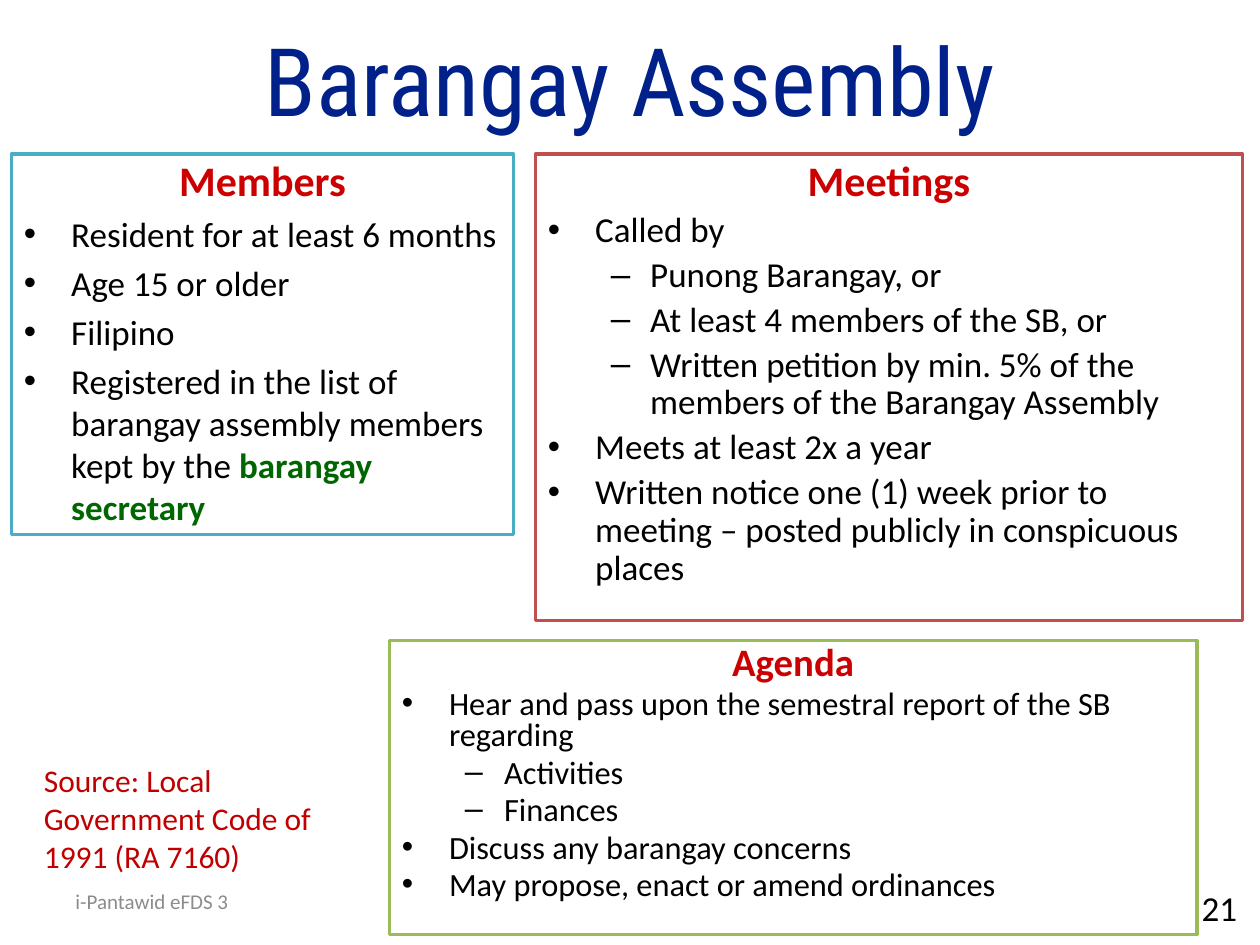
from dataclasses import dataclass

from lxml.etree import SubElement
from pptx import Presentation
from pptx.dml.color import RGBColor
from pptx.enum.shapes import MSO_SHAPE
from pptx.enum.text import MSO_ANCHOR as Anchor, MSO_AUTO_SIZE as AutoSize, PP_ALIGN as Align
from pptx.oxml.ns import qn
from pptx.util import Pt

BLACK, WHITE, RED, GREEN = "000000", "FFFFFF", "CC0000", "006600"
BULLETS = ("•", "–")
INDENTS = ((27, -27), (58.5, -22.5))  # left margin and first line, by level


@dataclass(frozen=True)
class Box:
    left: float
    top: float
    width: float
    height: float


@dataclass(frozen=True)
class Item:
    text: str
    level: int = 0
    emphasis: str = ""


@dataclass(frozen=True)
class Panel:
    heading: str
    box: Box
    border: str
    items: tuple[Item, ...]
    heading_size: float = 24
    item_size: float = 20
    heading_spacing: float = 0.9
    item_spacing: float = 0.9


PANELS = (
    Panel("Members", Box(6.5, 88, 287, 217.5), "4BACC6", (
        Item("Resident for at least 6 months"),
        Item("Age 15 or older"),
        Item("Filipino"),
        Item("Registered in the list of barangay assembly members kept by the ",
             emphasis="barangay secretary"),
    ), item_spacing=1),
    Panel("Meetings", Box(306, 88, 404, 266.5), "C0504D", (
        Item("Called by"),
        Item("Punong Barangay, or", 1),
        Item("At least 4 members of the SB, or", 1),
        Item("Written petition by min. 5% of the members of the Barangay Assembly", 1),
        Item("Meets at least 2x a year"),
        Item("Written notice one (1) week prior to meeting – posted publicly "
             "in conspicuous places"),
    )),
    Panel("Agenda", Box(222.5, 366, 461.5, 168), "9BBB59", (
        Item("Hear and pass upon the semestral report of the SB regarding"),
        Item("Activities", 1),
        Item("Finances", 1),
        Item("Discuss any barangay concerns"),
        Item("May propose, enact or amend ordinances"),
    ), 22.2, 18.5, 0.8, 0.8),
)


def color(value: str) -> RGBColor:
    return RGBColor.from_string(value)


def place(shape, box: Box) -> None:
    shape.left, shape.top = Pt(box.left), Pt(box.top)
    shape.width, shape.height = Pt(box.width), Pt(box.height)


def write(paragraph, text: str, *, size: float, fill: str = BLACK,
          font: str = "Calibri", bold: bool = False, align=Align.LEFT) -> None:
    paragraph.alignment = align
    run = paragraph.add_run()
    run.text = text
    run.font.size, run.font.name, run.font.bold = Pt(size), font, bold
    run.font.color.rgb = color(fill)


def set_spacing(paragraph, size: float, lines: float) -> None:
    paragraph.line_spacing = lines
    paragraph.space_before = Pt(round(size * 0.2, 1))
    paragraph.space_after = Pt(0)


def set_bullet(paragraph, level: int | None) -> None:
    """Set indents and bullet; a level of None means no bullet."""
    properties = paragraph._p.get_or_add_pPr()
    margin, indent = (0, 0) if level is None else INDENTS[level]
    properties.set("marL", str(Pt(margin)))
    properties.set("indent", str(Pt(indent)))
    if level is None:
        SubElement(properties, qn("a:buNone"))
    else:
        paragraph.level = level
        SubElement(properties, qn("a:buFont"), typeface="Arial")
        SubElement(properties, qn("a:buChar"), char=BULLETS[level])


def fill_panel(shape, panel: Panel) -> None:
    place(shape, panel.box)
    shape.fill.solid()
    shape.fill.fore_color.rgb = color(WHITE)
    shape.line.color.rgb = color(panel.border)
    shape.line.width = Pt(2)

    frame = shape.text_frame
    frame.word_wrap, frame.auto_size = True, AutoSize.NONE
    frame.vertical_anchor = Anchor.TOP
    heading = frame.paragraphs[0]
    set_spacing(heading, panel.heading_size, panel.heading_spacing)
    set_bullet(heading, None)
    write(heading, panel.heading, size=panel.heading_size, fill=RED,
          bold=True, align=Align.CENTER)
    for item in panel.items:
        paragraph = frame.add_paragraph()
        set_spacing(paragraph, panel.item_size, panel.item_spacing)
        set_bullet(paragraph, item.level)
        write(paragraph, item.text, size=panel.item_size)
        if item.emphasis:
            write(paragraph, item.emphasis, size=panel.item_size, fill=GREEN, bold=True)


def add_label(slide, text: str, box: Box, *, anchor=Anchor.MIDDLE, **text_format) -> None:
    shape = slide.shapes.add_textbox(0, 0, 0, 0)
    place(shape, box)
    frame = shape.text_frame
    frame.word_wrap, frame.vertical_anchor = True, anchor
    write(frame.paragraphs[0], text, **text_format)


def main() -> None:
    presentation = Presentation()
    presentation.slide_width, presentation.slide_height = Pt(720), Pt(540)
    slide = presentation.slides.add_slide(presentation.slide_layouts[1])

    # Title
    title = slide.shapes.title
    place(title, Box(36, 0, 648, 90))
    title.text_frame.auto_size = AutoSize.NONE
    title.text_frame.vertical_anchor = Anchor.MIDDLE
    write(title.text_frame.paragraphs[0], "Barangay Assembly", size=54,
          fill="00218A", font="Roboto Condensed", align=Align.CENTER)

    # Panels: the first is the body placeholder
    members, *others = PANELS
    fill_panel(slide.placeholders[1], members)
    for panel in others:
        shape = slide.shapes.add_shape(MSO_SHAPE.RECTANGLE, 0, 0, 0, 0)
        shape.shadow.inherit = False
        fill_panel(shape, panel)

    # Page number, footer and source
    add_label(slide, "21", Box(546, 504, 168, 29), size=20, align=Align.RIGHT)
    add_label(slide, "i-Pantawid eFDS 3", Box(36, 500.5, 168, 29), size=12, fill="8C8C8C")
    add_label(slide, "Source: Local Government Code of 1991 (RA 7160)",
              Box(18, 431.5, 180, 72.5), anchor=Anchor.TOP, size=18, fill="C00000")

    presentation.save("out.pptx")


if __name__ == "__main__":
    main()
